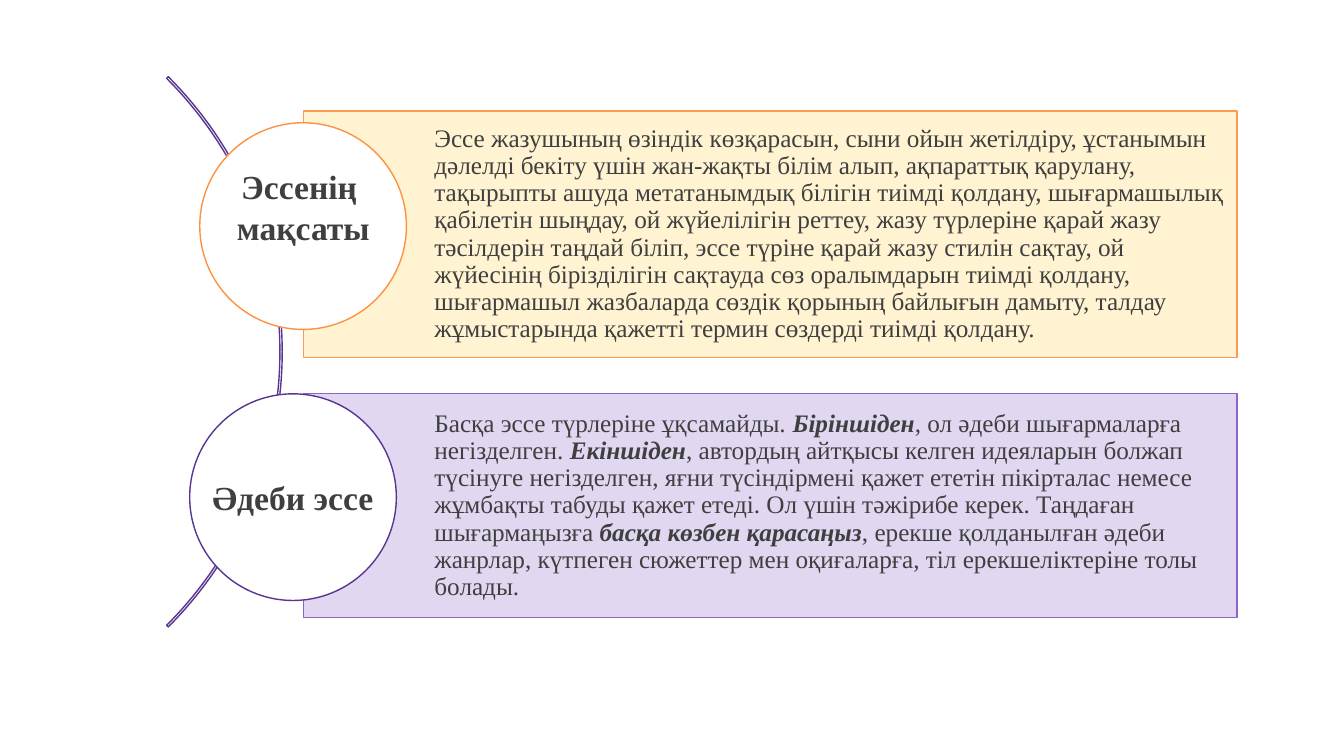
from pptx import Presentation
from pptx.dml.color import RGBColor
from pptx.enum.shapes import MSO_SHAPE as Preset
from pptx.enum.text import MSO_ANCHOR as Anchor, MSO_AUTO_SIZE as AutoSize, PP_ALIGN as Align
from pptx.util import Pt

COLORS = {
    "text": "3F3F3F", "white": "FFFFFF", "purple": "593593",
    "cream": "FFF3D1", "cream_edge": "FD9951", "orange": "FD9144",
    "lilac": "E1D7F1", "lilac_edge": "8A65C7",
}
FONT = "Times New Roman"
PANEL_LEFT, PANEL_WIDTH = 216.7, 666.9
CIRCLE_SIZE = 147.6

# Each text is a list of (words, emphasized) pairs.
GOAL_TEXT = [(
    "Эссе жазушының өзіндік көзқарасын, сыни ойын жетілдіру, ұстанымын дәлелді бекіту үшін "
    "жан-жақты білім алып, ақпараттық қарулану, тақырыпты ашуда метатанымдық білігін тиімді "
    "қолдану, шығармашылық қабілетін шыңдау, ой жүйелілігін реттеу, жазу түрлеріне қарай жазу "
    "тәсілдерін таңдай біліп, эссе түріне қарай жазу стилін сақтау, ой жүйесінің бірізділігін "
    "сақтауда сөз оралымдарын тиімді қолдану, шығармашыл жазбаларда сөздік қорының байлығын "
    "дамыту, талдау жұмыстарында қажетті термин сөздерді тиімді қолдану.", False)]
LITERARY_TEXT = [
    ("Басқа эссе түрлеріне ұқсамайды. ", False),
    ("Біріншіден", True),
    (", ол әдеби шығармаларға негізделген. ", False),
    ("Екіншіден", True),
    (", автордың айтқысы келген идеяларын болжап түсінуге негізделген, яғни түсіндірмені қажет "
     "ететін пікірталас немесе жұмбақты табуды қажет етеді. Ол үшін тәжірибе керек. Таңдаған "
     "шығармаңызға ", False),
    ("басқа көзбен қарасаңыз", True),
    (", ерекше қолданылған әдеби жанрлар, күтпеген сюжеттер мен оқиғаларға, тіл "
     "ерекшеліктеріне толы болады.", False),
]


def set_all(target, formats):
    for attribute, value in formats.items():
        setattr(target, attribute, value)


def style_font(font, size, bold=False, italic=False):
    set_all(font, {"name": FONT, "size": Pt(size), "bold": bold, "italic": italic})
    font.color.rgb = RGBColor.from_string(COLORS["text"])


def add_outlined(slide, preset, box, edge, fill=None):
    shape = slide.shapes.add_shape(preset, *map(Pt, box))
    shape.shadow.inherit = False
    if fill:
        shape.fill.solid()
        shape.fill.fore_color.rgb = RGBColor.from_string(COLORS[fill])
    else:
        shape.fill.background()
    shape.line.color.rgb = RGBColor.from_string(COLORS[edge])
    shape.line.width = Pt(1)
    return shape


def add_arc(slide):
    arc = add_outlined(slide, Preset.BLOCK_ARC, (-354.2, -26.6, 555.8, 555.8), "purple")
    for index, value in enumerate((189, 27, 0.003)):
        arc.adjustments[index] = value


def add_panel(slide, top, height, fill, edge, pieces):
    panel = add_outlined(slide, Preset.RECTANGLE, (PANEL_LEFT, top, PANEL_WIDTH, height), edge, fill)
    set_all(panel.text_frame, {
        "word_wrap": True, "vertical_anchor": Anchor.MIDDLE, "margin_left": Pt(93.6),
        "margin_top": Pt(2.9), "margin_right": Pt(2.9), "margin_bottom": Pt(2.9),
    })
    paragraph = panel.text_frame.paragraphs[0]
    set_all(paragraph, {"alignment": Align.LEFT, "line_spacing": 0.9})
    for words, emphasized in pieces:
        run = paragraph.add_run()
        run.text = words
        style_font(run.font, 18, emphasized, emphasized)


def add_circle(slide, left, top, edge):
    add_outlined(slide, Preset.OVAL, (left, top, CIRCLE_SIZE, CIRCLE_SIZE), edge, "white")


def add_label(slide, box, lines, wrap):
    frame = slide.shapes.add_textbox(*map(Pt, box)).text_frame
    set_all(frame, {"word_wrap": wrap, "auto_size": AutoSize.SHAPE_TO_FIT_TEXT})
    frame.text = "\n".join(lines)
    for paragraph in frame.paragraphs:
        paragraph.alignment = Align.CENTER
        style_font(paragraph.runs[0].font, 24, bold=True)


def main():
    deck = Presentation()
    set_all(deck, {"slide_width": Pt(960), "slide_height": Pt(540)})
    slide = deck.slides.add_slide(deck.slide_layouts[6])

    add_arc(slide)
    add_panel(slide, 79.4, 176, "cream", "cream_edge", GOAL_TEXT)
    add_circle(slide, 142.7, 87.7, "orange")
    add_panel(slide, 281.3, 160, "lilac", "lilac_edge", LITERARY_TEXT)
    add_circle(slide, 135.5, 281.3, "purple")
    add_label(slide, (162, 115.2, 109.4, 65.5), ["Эссенің ", "мақсаты"], True)
    add_label(slide, (144, 337, 130.3, 36), ["Әдеби эссе"], False)

    deck.save("out.pptx")


if __name__ == "__main__":
    main()
